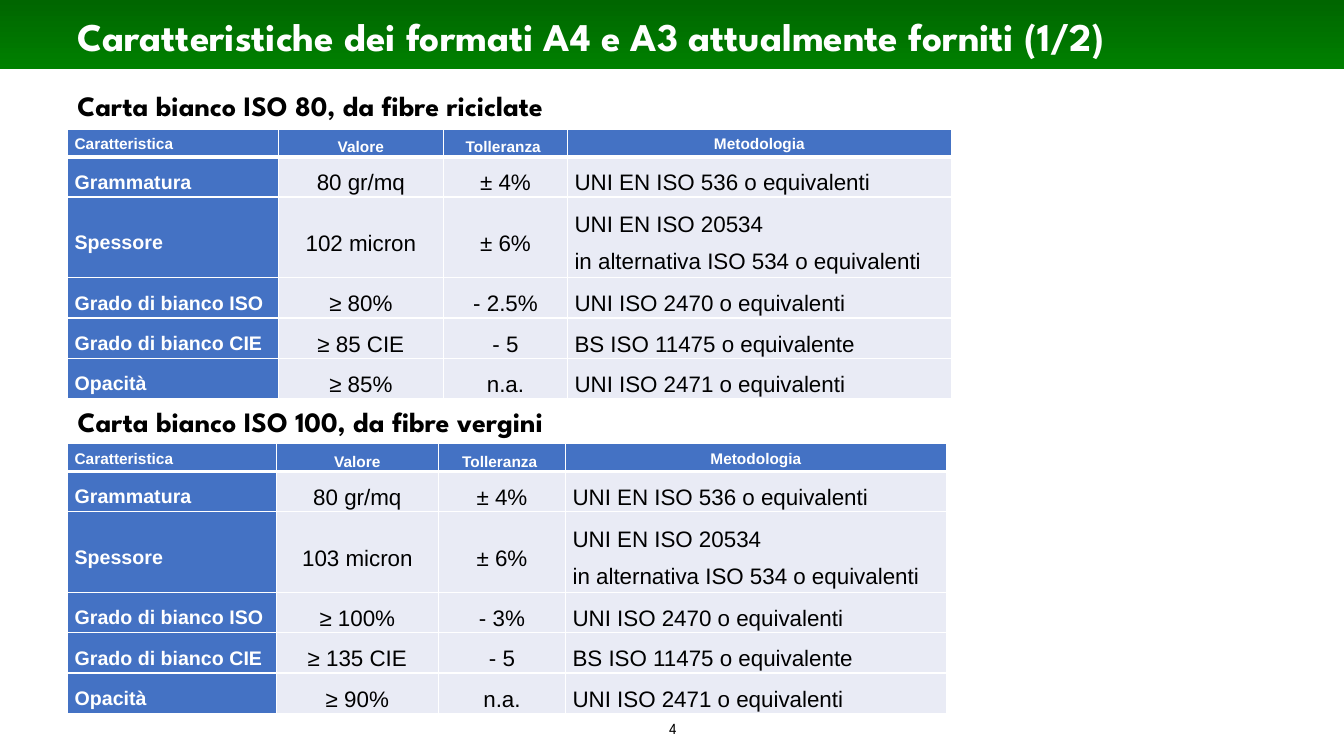
"""Build the slide on the characteristics of the A4 and A3 paper formats."""
from lxml import etree
from pptx import Presentation
from pptx.dml.color import RGBColor
from pptx.enum.shapes import MSO_SHAPE
from pptx.enum.text import MSO_ANCHOR, MSO_AUTO_SIZE, PP_ALIGN
from pptx.oxml import parse_xml
from pptx.oxml.ns import nsdecls, qn
from pptx.util import Cm, Pt

RECTANGLE = MSO_SHAPE.RECTANGLE
MIDDLE, TOP = MSO_ANCHOR.MIDDLE, MSO_ANCHOR.TOP
NO_AUTOFIT, GROW = MSO_AUTO_SIZE.NONE, MSO_AUTO_SIZE.SHAPE_TO_FIT_TEXT
LEFT, CENTER, JUSTIFY = PP_ALIGN.LEFT, PP_ALIGN.CENTER, PP_ALIGN.JUSTIFY
HEADING_FONT, TABLE_FONT = "League Spartan", "Arial"
WHITE, BLACK, BLUE, PALE = "FFFFFF", "000000", "4472C4", "E9EBF5"
MARGIN = Cm(1.7)


def color(hex_string):
    return RGBColor.from_string(hex_string)


def format_paragraph(paragraph, font_name, size, font_color, bold, alignment):
    paragraph.alignment = alignment
    paragraph.font.name = font_name
    paragraph.font.size = Pt(size)
    paragraph.font.bold = bold
    paragraph.font.color.rgb = color(font_color)


presentation = Presentation()
presentation.slide_width = Cm(33.87)
presentation.slide_height = Cm(19.05)
slide = presentation.slides.add_slide(presentation.slide_layouts[1])
title, body = slide.placeholders

banner = slide.shapes.add_shape(RECTANGLE, 0, 0, presentation.slide_width, Cm(1.75))
banner.shadow.inherit = False
banner.line.fill.background()
banner.fill.gradient()
banner.fill.gradient_angle = 270
for stop, stop_color in zip(banner.fill.gradient_stops, ("006600", "008000")):
    stop.color.rgb = color(stop_color)
title.element.addprevious(banner.element)

recycled_heading = slide.shapes.add_textbox(MARGIN, Cm(2.11), Cm(13.51), Cm(1.12))
page_number = slide.shapes.add_textbox(Cm(13.44), Cm(18.01), Cm(7.04), Cm(0.69))
title.left, title.top, title.width, title.height = MARGIN, Cm(0.3), Cm(30.51), Cm(1.19)
body.left, body.top, body.width, body.height = MARGIN, Cm(9.98), Cm(18.64), Cm(1.19)

texts = [
    (title, "Caratteristiche dei formati A4 e A3 attualmente forniti (1/2)",
     28, WHITE, True, LEFT, MIDDLE, NO_AUTOFIT),
    (recycled_heading, "Carta bianco ISO 80, da fibre riciclate",
     20, BLACK, True, LEFT, TOP, GROW),
    (body, "Carta bianco ISO 100, da fibre vergini",
     20, BLACK, True, JUSTIFY, TOP, NO_AUTOFIT),
    (page_number, "4", 11, BLACK, False, CENTER, MIDDLE, NO_AUTOFIT),
]
for shape, text, size, font_color, bold, alignment, anchor, auto_size in texts:
    frame = shape.text_frame
    frame.text = text
    frame.word_wrap = shape is not recycled_heading
    frame.auto_size = auto_size
    frame.vertical_anchor = anchor
    paragraph = frame.paragraphs[0]
    if shape is body:
        properties = paragraph.element.get_or_add_pPr() if hasattr(paragraph, "element") else paragraph._p.get_or_add_pPr()
        properties.set("marL", "0")
        properties.set("indent", "0")
        etree.SubElement(properties, qn("a:buNone"))
        paragraph.line_spacing = 1.1
        paragraph.space_before = Pt(0)
    format_paragraph(paragraph, HEADING_FONT, size, font_color, bold, alignment)

header = ["Caratteristica", "Valore", "Tolleranza ", "Metodologia"]
characteristics = ["Grammatura", "Spessore", "Grado di bianco ISO",
                   "Grado di bianco CIE", "Opacità"]
methods = ["UNI EN ISO 536 o equivalenti",
           "UNI EN ISO 20534\nin alternativa ISO 534 o equivalenti",
           "UNI ISO 2470 o equivalenti", "BS ISO 11475 o equivalente",
           "UNI ISO 2471 o equivalenti"]
row_heights = [0.65, 0.94, 1.88, 0.94, 0.94]
paper_tables = [
    (3.25, (5.31, 4.17, 3.12, 9.68), 0.99,
     ["80 gr/mq", "102 micron", "≥ 80%", "≥ 85 CIE", "≥ 85%"],
     ["± 4%", "± 6%", "- 2.5%", "- 5", "n.a."]),
    (11.18, (5.26, 4.09, 3.2, 9.6), 0.94,
     ["80 gr/mq", "103 micron", "≥ 100%", "≥ 135 CIE", "≥ 90%"],
     ["± 4%", "± 6%", "- 3%", "- 5", "n.a."]),
]
for top, column_widths, last_height, values, tolerances in paper_tables:
    rows = [header, *zip(characteristics, values, tolerances, methods)]
    heights = [*row_heights, last_height]
    table = slide.shapes.add_table(len(rows), len(header), MARGIN, Cm(top),
                                   Cm(sum(column_widths)), Cm(sum(heights))).table
    for column, width in zip(table.columns, column_widths):
        column.width = Cm(width)
    for row, height in zip(table.rows, heights):
        row.height = Cm(height)
    for row_index, row in enumerate(rows):
        for column_index, text in enumerate(row):
            is_header, is_label = row_index == 0, column_index == 0
            cell = table.cell(row_index, column_index)
            cell.text = text
            cell.vertical_anchor = MIDDLE
            cell.margin_left = cell.margin_right = Cm(0.18)
            cell.margin_top = cell.margin_bottom = 0
            border_widths = {"lnL": 1, "lnR": 1, "lnT": 3 if row_index == 1 else 1,
                             "lnB": 3 if is_header else 1}
            for side, width in border_widths.items():
                cell._tc.get_or_add_tcPr().append(parse_xml(
                    f'<a:{side} {nsdecls("a")} w="{Pt(width)}"><a:solidFill>'
                    f'<a:srgbClr val="{WHITE}"/></a:solidFill></a:{side}>'))
            cell.fill.solid()
            cell.fill.fore_color.rgb = color(BLUE if is_header or is_label else PALE)

            if is_header:
                size, alignment = 11, JUSTIFY if is_label else CENTER
            else:
                size = 14 if is_label else 16
                alignment = CENTER if column_index in (1, 2) else LEFT
            for paragraph in cell.text_frame.paragraphs:
                if is_header and column_index in (0, 3):
                    paragraph.line_spacing = Pt(14)
                    paragraph.space_after = Pt(3)
                else:
                    paragraph.line_spacing = 1.5
                format_paragraph(paragraph, TABLE_FONT, size,
                                 WHITE if is_header or is_label else BLACK,
                                 is_header or is_label, alignment)

presentation.save("out.pptx")
